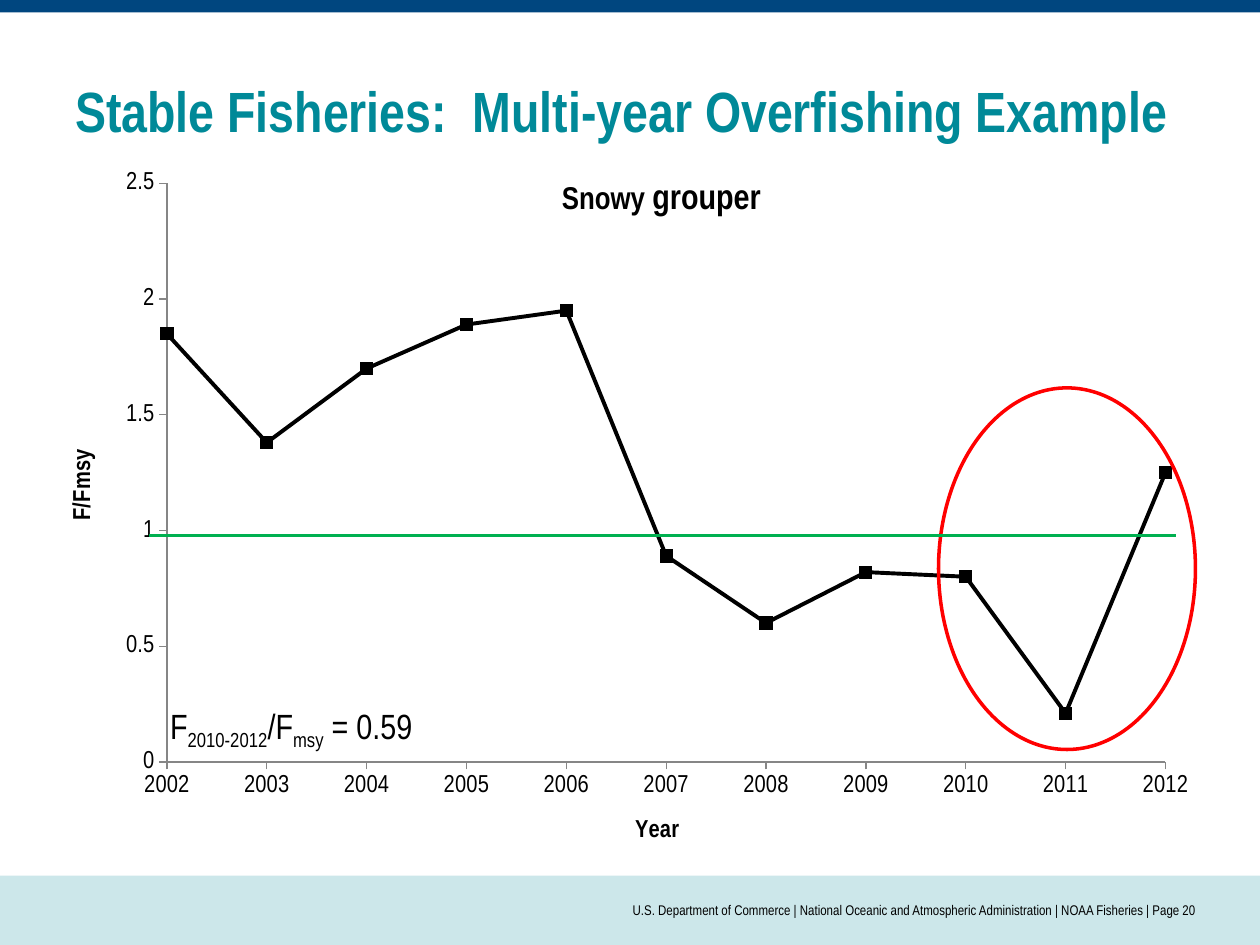
import pptx
import pptx.chart.data
import pptx.dml.color
import pptx.enum.chart
import pptx.enum.shapes
import pptx.enum.text
import pptx.oxml
import pptx.oxml.ns
import pptx.util

Cm = pptx.util.Cm
Pt = pptx.util.Pt
RGBColor = pptx.dml.color.RGBColor
SHAPE = pptx.enum.shapes.MSO_SHAPE
ALIGN = pptx.enum.text.PP_ALIGN
ANCHOR = pptx.enum.text.MSO_ANCHOR
XL = pptx.enum.chart
qn = pptx.oxml.ns.qn

FONT = "Arial Narrow"
BLACK = RGBColor(0x00, 0x00, 0x00)
NAVY = RGBColor(0x00, 0x46, 0x7F)
PALE = RGBColor(0xCC, 0xE7, 0xEA)
TEAL = RGBColor(0x00, 0x89, 0x98)
RED = RGBColor(0xFF, 0x00, 0x00)
GREEN = RGBColor(0x00, 0xB0, 0x50)
GRAY = RGBColor(0x86, 0x86, 0x86)

F_RATIOS = {
    "2002": 1.85, "2003": 1.38, "2004": 1.7, "2005": 1.89, "2006": 1.95, "2007": 0.89,
    "2008": 0.6, "2009": 0.82, "2010": 0.8, "2011": 0.21, "2012": 1.25,
}


def style_font(font, size, color=BLACK, bold=False):
    font.name = FONT
    font.size = Pt(size)
    font.bold = bold
    font.color.rgb = color


def add_bar(s, box, color):
    sp = s.shapes.add_shape(SHAPE.RECTANGLE, *map(Cm, box))
    sp.shadow.inherit = False
    sp.fill.solid()
    sp.fill.fore_color.rgb = color
    sp.line.fill.background()


def add_text(s, box, runs, align=ALIGN.LEFT, anchor=ANCHOR.TOP, inset=0.25,
             color=BLACK, bold=False):
    tf = s.shapes.add_textbox(*map(Cm, box)).text_frame
    tf.word_wrap = True
    tf.vertical_anchor = anchor
    tf.margin_left = tf.margin_right = Cm(inset)
    p = tf.paragraphs[0]
    p.alignment = align
    for text, size, baseline in runs:
        r = p.add_run()
        r.text = text
        style_font(r.font, size, color, bold)
        if baseline:
            r._r.get_or_add_rPr().set("baseline", str(baseline * 1000))


def style_axis(axis, title):
    axis.has_major_gridlines = False
    axis.major_tick_mark = XL.XL_TICK_MARK.OUTSIDE
    axis.minor_tick_mark = XL.XL_TICK_MARK.NONE
    axis.format.line.color.rgb = GRAY
    axis.format.line.width = Pt(0.75)
    style_font(axis.tick_labels.font, 14)
    tf = axis.axis_title.text_frame
    r = tf.paragraphs[0].add_run()
    r.text = title
    style_font(r.font, 14, bold=True)
    return tf


def set_plot_area(chart, x, y, w, h):
    plot_area = chart._chartSpace.chart.plotArea
    for old in plot_area.findall(qn("c:layout")):
        plot_area.remove(old)
    ns = pptx.oxml.ns.nsdecls("c")
    layout = pptx.oxml.parse_xml(
        f'<c:layout {ns}><c:manualLayout>'
        '<c:layoutTarget val="inner"/><c:xMode val="edge"/><c:yMode val="edge"/>'
        f'<c:x val="{x}"/><c:y val="{y}"/><c:w val="{w}"/><c:h val="{h}"/>'
        '</c:manualLayout></c:layout>')
    plot_area.insert(0, layout)
    val_ax = plot_area.find(qn("c:valAx"))
    for old in val_ax.findall(qn("c:crossBetween")):
        val_ax.remove(old)
    before = [val_ax.find(qn(tag)) for tag in ("c:crosses", "c:crossAx")]
    anchor = next(el for el in before if el is not None)
    anchor.addnext(pptx.oxml.parse_xml(f'<c:crossBetween {ns} val="midCat"/>'))


def add_ratio_chart(s, box):
    data = pptx.chart.data.CategoryChartData()
    data.categories = list(F_RATIOS)
    data.add_series("Series 1", list(F_RATIOS.values()))
    chart = s.shapes.add_chart(XL.XL_CHART_TYPE.LINE_MARKERS, *map(Cm, box), data).chart
    chart.has_title = False
    chart.has_legend = False
    style_font(chart.font, 14)
    chart.plots[0].vary_by_categories = False
    series = chart.plots[0].series[0]
    series.smooth = False
    series.format.line.color.rgb = BLACK
    series.format.line.width = Pt(2.25)
    marker = series.marker
    marker.style = XL.XL_MARKER_STYLE.SQUARE
    marker.size = 7
    marker.format.fill.solid()
    marker.format.fill.fore_color.rgb = BLACK
    marker.format.line.color.rgb = BLACK
    style_axis(chart.category_axis, "Year")
    axis = chart.value_axis
    axis.minimum_scale, axis.maximum_scale, axis.major_unit = 0, 2.5, 0.5
    tf = style_axis(axis, "F/Fmsy")
    body = tf._txBody.find(qn("a:bodyPr"))
    body.set("rot", "-5400000")
    body.set("vert", "horz")
    set_plot_area(chart, 0.107, 0.036, 0.853, 0.81)


def add_chart_region(s, box):
    x, y, w, h = box
    add_ratio_chart(s, box)
    sp = s.shapes.add_shape(SHAPE.OVAL, Cm(x + 18.08), Cm(y + 4.64), Cm(5.18), Cm(7.29))
    sp.shadow.inherit = False
    sp.fill.background()
    sp.line.color.rgb = RED
    sp.line.width = Pt(2)
    limit = s.shapes.add_connector(
        pptx.enum.shapes.MSO_CONNECTOR.STRAIGHT,
        Cm(x + 2.16), Cm(y + 7.62), Cm(x + 22.86), Cm(y + 7.62))
    limit.line.color.rgb = GREEN
    limit.line.width = Pt(1.5)
    limit._element.spPr.append(pptx.oxml.parse_xml(
        f'<a:effectLst {pptx.oxml.ns.nsdecls("a")}/>'))
    add_text(s, (x + 2.34, y + 10.89, 6.88, 1.12),
             [("F", 20, 0), ("2010-2012", 20, -25), ("/F", 20, 0),
              ("msy", 20, -25), (" = 0.59", 20, 0)])
    add_text(s, (x + 5.41, y + 0.22, 14.17, 1.12),
             [("Snowy ", 18, 0), ("grouper", 20, 0)], ALIGN.CENTER, bold=True)


def add_header(s, box):
    x, y, w, h = box
    add_bar(s, (x, y, w, 0.25), NAVY)
    add_text(s, (x + 1.27, y + 1.27, w - 2.54, 1.88),
             [("Stable Fisheries:  Multi-year Overfishing Example", 32.4, 0)],
             anchor=ANCHOR.MIDDLE, color=TEAL, bold=True)


def add_footer(s, box):
    x, y, w, h = box
    add_bar(s, box, PALE)
    add_text(s, (x + 6.35, y, w - 7.62, h),
             [("U.S. Department of Commerce | National Oceanic and Atmospheric "
               "Administration | NOAA Fisheries | Page 20", 8, 0)],
             ALIGN.RIGHT, ANCHOR.MIDDLE, inset=0)


def main():
    prs = pptx.Presentation()
    prs.slide_width, prs.slide_height = Cm(25.4), Cm(19.05)
    s = prs.slides.add_slide(prs.slide_layouts[6])
    add_footer(s, (0, 17.65, 25.4, 1.4))
    add_header(s, (0, 0, 25.4, 3.18))
    add_chart_region(s, (0.84, 3.18, 23.6, 14.4))
    prs.save("out.pptx")


if __name__ == "__main__":
    main()
